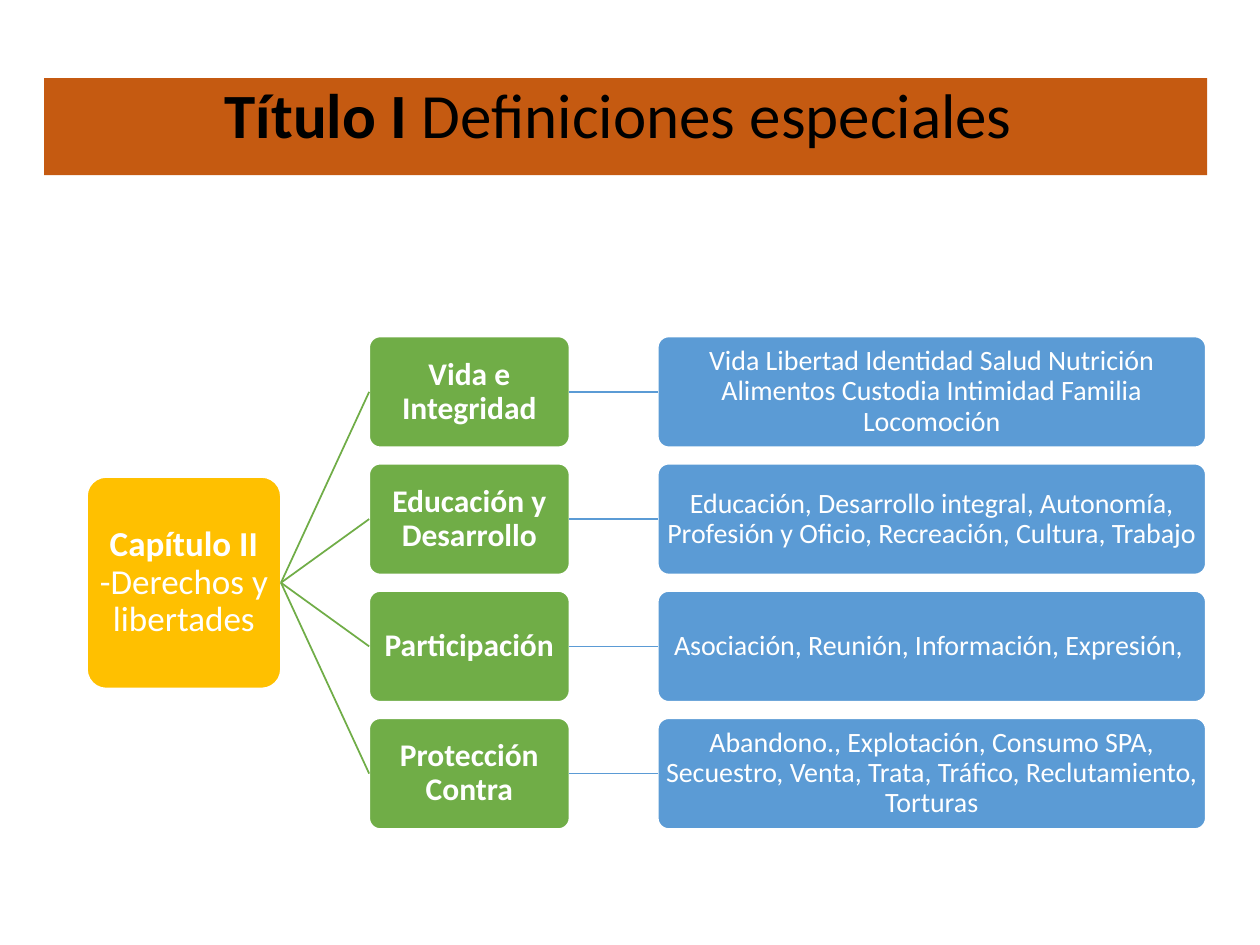
from collections import namedtuple
from dataclasses import dataclass

from lxml import etree
from pptx import Presentation
from pptx import util as u
from pptx.dml.color import RGBColor
from pptx.enum import shapes, text
from pptx.oxml.ns import qn

Box = namedtuple("Box", "left top width height")


@dataclass(frozen=True)
class Theme:
    font: str = "Calibri"
    banner: str = "C55A11"
    chapter: str = "FFC000"
    group: str = "70AD47"
    rights: str = "5B9BD5"
    light: str = "FFFFFF"
    dark: str = "000000"
    title_size: int = 36
    chapter_size: int = 20
    group_size: int = 18
    rights_size: int = 16
    line_spacing: float = 0.9
    line_width: int = 1


THEME = Theme()
COLUMNS = {"chapter": 1.54, "group": 1.59, "rights": 4.35}
COLUMN_GAP = 0.7
ROW_HEIGHT, ROW_GAP = 0.88, 0.13
CHAPTER_HEIGHT = 1.68

TITLE = [("Título I ", True), ("Definiciones especiales ", False)]
CHAPTER = [("Capítulo II ", True), ("-Derechos y libertades", False)]
GROUPS = [
    ("Vida e Integridad",
     "Vida Libertad Identidad Salud Nutrición Alimentos Custodia Intimidad Familia Locomoción"),
    ("Educación y Desarrollo",
     "Educación, Desarrollo integral, Autonomía, Profesión y Oficio, Recreación, Cultura, Trabajo"),
    ("Participación", "Asociación, Reunión, Información, Expresión, "),
    ("Protección Contra",
     "Abandono., Explotación, Consumo SPA, Secuestro, Venta, Trata, Tráfico, Reclutamiento, Torturas"),
]


def rgb(color):
    return RGBColor.from_string(color)


def inches(box):
    return [u.Inches(length) for length in box]


def write(frame, runs, size, color):
    frame.word_wrap = True
    paragraph = frame.paragraphs[0]
    paragraph.alignment = text.PP_ALIGN.CENTER
    paragraph.line_spacing = THEME.line_spacing
    for words, bold in runs:
        run = paragraph.add_run()
        run.text = words
        run.font.name = THEME.font
        run.font.size = u.Pt(size)
        run.font.bold = bold
        run.font.color.rgb = rgb(color)


def add_banner(slide, box):
    title = slide.shapes.title
    title.left, title.top, title.width, title.height = inches(box)
    title.fill.solid()
    title.fill.fore_color.rgb = rgb(THEME.banner)
    frame = title.text_frame
    frame.auto_size = text.MSO_AUTO_SIZE.NONE
    frame.vertical_anchor = text.MSO_ANCHOR.TOP
    write(frame, TITLE, THEME.title_size, THEME.dark)


def add_node(slide, box, runs, size, color):
    node = slide.shapes.add_shape(shapes.MSO_SHAPE.ROUNDED_RECTANGLE, *inches(box))
    node.adjustments[0] = 0.1
    node.shadow.inherit = False
    node.fill.solid()
    node.fill.fore_color.rgb = rgb(color)
    node.line.color.rgb = rgb(THEME.light)
    node.line.width = u.Pt(THEME.line_width)
    frame = node.text_frame
    frame.margin_left = frame.margin_right = u.Inches(0.01)
    frame.margin_top = frame.margin_bottom = u.Inches(0.01)
    frame.vertical_anchor = text.MSO_ANCHOR.MIDDLE
    write(frame, runs, size, THEME.light)
    return node


def join(slide, parent, child, color):
    branch = slide.shapes.add_connector(shapes.MSO_CONNECTOR.STRAIGHT, 0, 0, 0, 0)
    branch.begin_connect(parent, 3)
    branch.end_connect(child, 1)
    branch.line.color.rgb = rgb(color)
    branch.line.width = u.Pt(THEME.line_width)
    etree.SubElement(branch._element.spPr, qn("a:effectLst"))


def add_rights_tree(slide, box):
    group_left = box.left + COLUMNS["chapter"] + COLUMN_GAP
    rights_left = group_left + COLUMNS["group"] + COLUMN_GAP
    chapter_top = box.top + (box.height - CHAPTER_HEIGHT) / 2
    chapter = add_node(
        slide, Box(box.left, chapter_top, COLUMNS["chapter"], CHAPTER_HEIGHT),
        CHAPTER, THEME.chapter_size, THEME.chapter)
    for row, (group_name, rights_list) in enumerate(GROUPS):
        top = box.top + row * (ROW_HEIGHT + ROW_GAP)
        group = add_node(
            slide, Box(group_left, top, COLUMNS["group"], ROW_HEIGHT),
            [(group_name, True)], THEME.group_size, THEME.group)
        rights = add_node(
            slide, Box(rights_left, top, COLUMNS["rights"], ROW_HEIGHT),
            [(rights_list, False)], THEME.rights_size, THEME.rights)
        join(slide, chapter, group, THEME.group)
        join(slide, group, rights, THEME.rights)


def main():
    deck = Presentation()
    deck.slide_width, deck.slide_height = u.Inches(10), u.Inches(7.5)
    slide = deck.slides.add_slide(deck.slide_layouts[5])
    add_banner(slide, Box(0.35, 0.62, 9.23, 0.77))
    tree_width = sum(COLUMNS.values()) + COLUMN_GAP * (len(COLUMNS) - 1)
    tree_height = ROW_HEIGHT * len(GROUPS) + ROW_GAP * (len(GROUPS) - 1)
    add_rights_tree(slide, Box(0.69, 2.67, tree_width, tree_height))
    deck.save("out.pptx")


if __name__ == "__main__":
    main()
